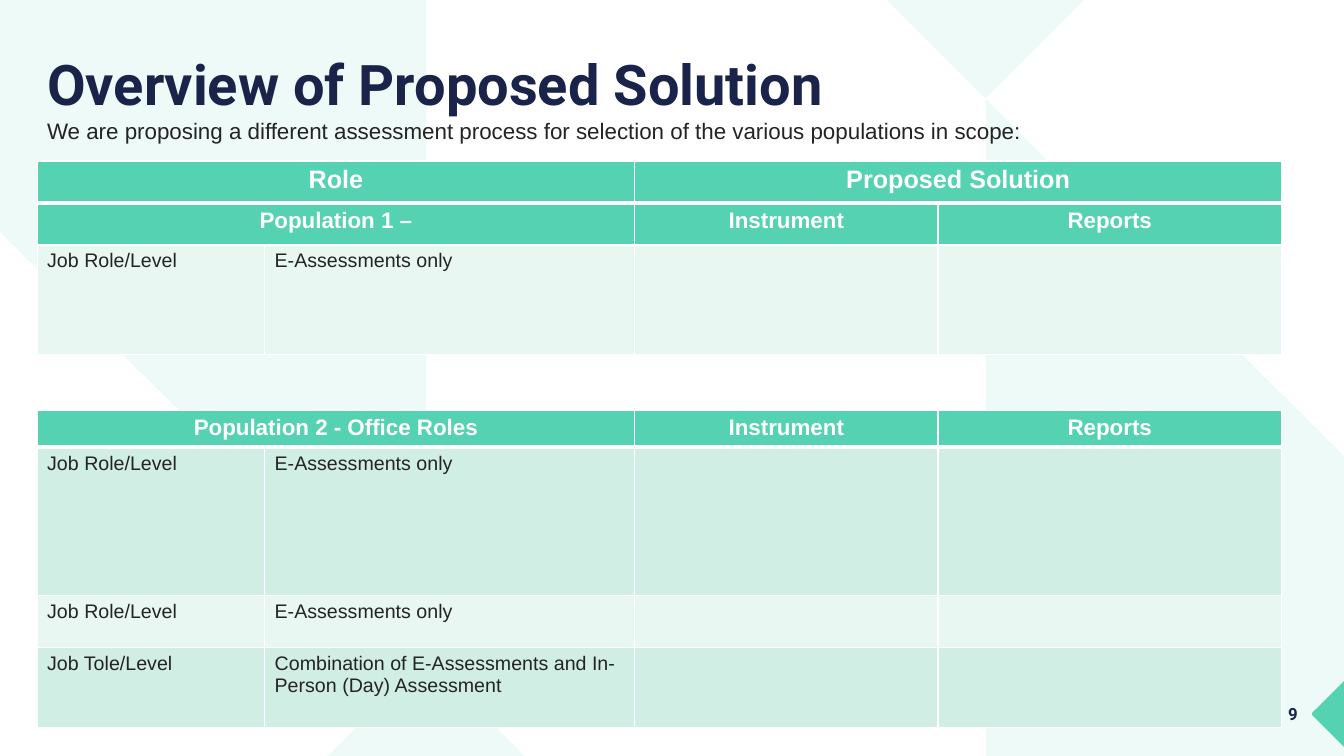
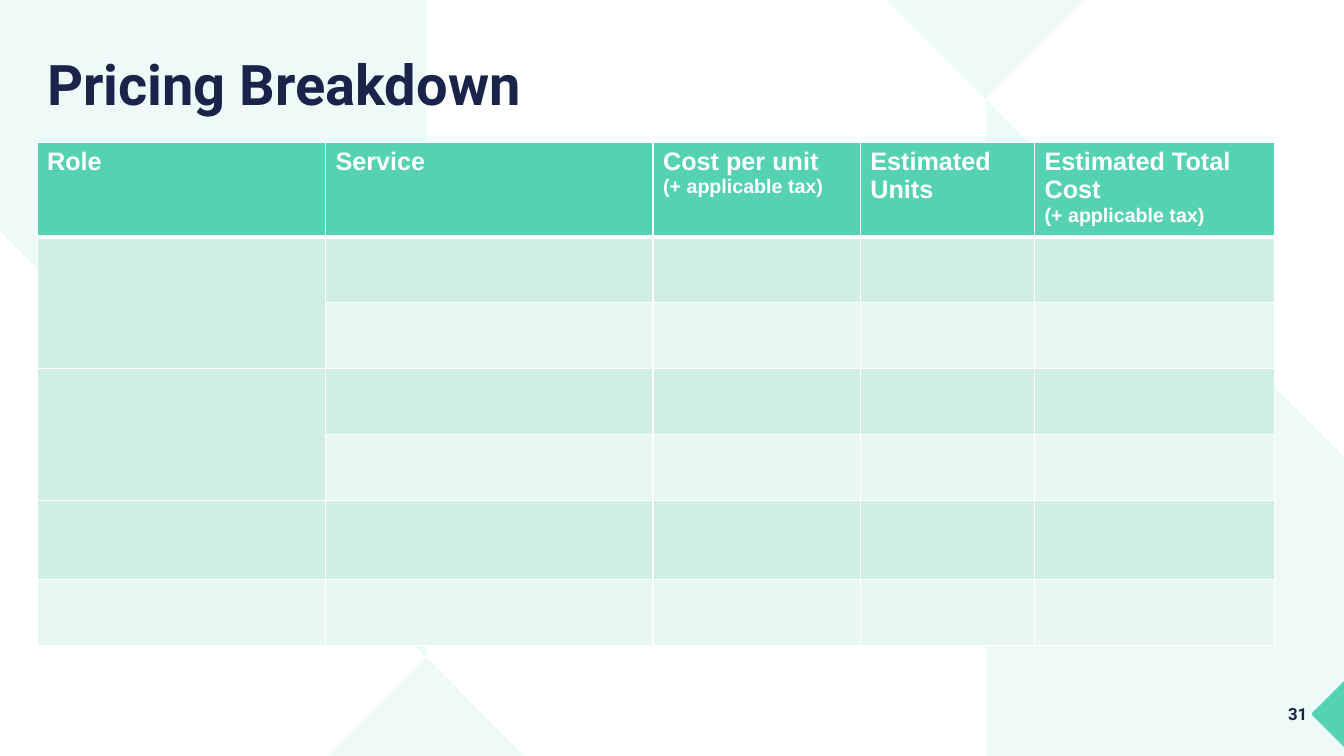
import dataclasses

import lxml.etree
import pptx
import pptx.dml.color
import pptx.enum.text
import pptx.oxml.ns
import pptx.util

Pt = pptx.util.Pt
RGB = pptx.dml.color.RGBColor.from_string
qn = pptx.oxml.ns.qn
ALIGN = pptx.enum.text.PP_ALIGN


@dataclasses.dataclass(frozen=True)
class Theme:
    mint: str = "55D2B1"
    band: str = "D1EEE4"
    pale: str = "E9F7F2"
    navy: str = "1A244A"
    ink: str = "242424"
    white: str = "FFFFFF"
    heading: str = "Roboto"
    body: str = "Arial"
    title: int = 40
    head: int = 18
    subhead: int = 16
    text: int = 14
    number: int = 12


theme = Theme()
LEFT = 26.5


def style(p, size, color, font, bold=False, align=ALIGN.LEFT):
    p.alignment = align
    for r in p.runs:
        r.font.size = Pt(size)
        r.font.name = font
        r.font.bold = bold
        r.font.color.rgb = RGB(color)


def add_grid(s, top, cols, rows, texts, head_sizes, merges, head_align):
    frame = s.shapes.add_table(len(rows), len(cols), Pt(LEFT), Pt(top), Pt(sum(cols)), Pt(sum(rows)))
    table = frame.table
    for column, width in zip(table.columns, cols):
        column.width = Pt(width)
    for row, height in zip(table.rows, rows):
        row.height = Pt(height)
    for y in range(len(rows)):
        is_head = y < len(head_sizes)
        for x in range(len(cols)):
            cell = table.cell(y, x)
            tcPr = cell._tc.get_or_add_tcPr()
            for side in "LRTB":
                if side == "T" and y > 0:
                    continue
                width = 3 if side == "B" and y == 0 else 1
                ln = lxml.etree.SubElement(tcPr, qn("a:ln" + side), w=str(Pt(width)))
                fill = lxml.etree.SubElement(ln, qn("a:solidFill"))
                lxml.etree.SubElement(fill, qn("a:srgbClr"), val=theme.white)
            cell.fill.solid()
            cell.fill.fore_color.rgb = RGB(theme.mint if is_head else theme.band if y % 2 else theme.pale)
            cell.text_frame.text = texts.get((y, x), "")
            for i, p in enumerate(cell.text_frame.paragraphs):
                if is_head:
                    size = theme.text if i else head_sizes[y]
                    style(p, size, theme.white, theme.body, True, head_align)
                else:
                    style(p, theme.text, theme.ink, theme.body)
    for first, last in merges:
        table.cell(*first).merge(table.cell(*last))


prs = pptx.Presentation()
prs.slide_width, prs.slide_height = Pt(960), Pt(540)
layout = prs.slide_layouts[5]

slides = []
for title, number in [("Overview of Proposed Solution", "9"), ("Pricing Breakdown", "31")]:
    s = prs.slides.add_slide(layout)
    slides.append(s)
    sp = s.shapes.title
    sp.left, sp.top, sp.width, sp.height = Pt(LEFT), Pt(34), Pt(828), Pt(57)
    tf = sp.text_frame
    tf.text = title
    tf.auto_size = pptx.enum.text.MSO_AUTO_SIZE.NONE
    tf.vertical_anchor = pptx.enum.text.MSO_ANCHOR.MIDDLE
    tf.paragraphs[0].line_spacing = 0.9
    style(tf.paragraphs[0], theme.title, theme.navy, theme.heading, True)

    tf = s.shapes.add_textbox(Pt(913), Pt(499), Pt(29), Pt(36)).text_frame
    tf.word_wrap = True
    tf.text = number
    style(tf.paragraphs[0], theme.number, theme.navy, theme.heading, True)

overview, pricing = slides

backdrop = [
    ([(0, 0), (304.5, 0), (304.5, 469.5), (0, 165.5)], 10),
    ([(633.5, 0), (774, 0), (704, 70.5)], 10),
    ([(704, 70.5), (960, 326), (960, 540), (704, 540)], 10),
    ([(304.5, 469.5), (374.5, 540), (234, 540)], 10),
    ([(960, 533.5), (937.5, 511), (937, 510), (937.5, 509), (960, 486.5)], 100),
]
for points, opacity in backdrop:
    corners = [(Pt(x), Pt(y)) for x, y in points]
    builder = overview.shapes.build_freeform(*corners[0])
    builder.add_line_segments(corners[1:], close=True)
    sp = builder.convert_to_shape()
    sp.shadow.inherit = False
    sp.line.fill.background()
    sp.fill.solid()
    sp.fill.fore_color.rgb = RGB(theme.mint)
    if opacity < 100:
        color = next(sp.element.iter(qn("a:srgbClr")))
        lxml.etree.SubElement(color, qn("a:alpha"), val=str(opacity * 1000))
    layout.shapes.element.append(sp.element)

tf = overview.shapes.add_textbox(Pt(LEFT), Pt(80), Pt(713.5), Pt(26.5)).text_frame
tf.word_wrap = True
tf.text = "We are proposing a different assessment process for selection of the various populations in scope:"
style(tf.paragraphs[0], theme.subhead, theme.ink, theme.body)

population_cols = [162.5, 264.5, 216.5, 245.5]
add_grid(
    overview, 115, population_cols, [30, 30, 78],
    {
        (0, 0): "Role", (0, 2): "Proposed Solution",
        (1, 0): "Population 1 –", (1, 2): "Instrument", (1, 3): "Reports",
        (2, 0): "Job Role/Level", (2, 1): "E-Assessments only",
    },
    [theme.head, theme.subhead],
    [((0, 0), (0, 1)), ((0, 2), (0, 3)), ((1, 0), (1, 1))],
    ALIGN.CENTER,
)
add_grid(
    overview, 293, population_cols, [26.5, 106, 37, 57.5],
    {
        (0, 0): "Population 2 - Office Roles", (0, 2): "Instrument", (0, 3): "Reports",
        (1, 0): "Job Role/Level", (1, 1): "E-Assessments only",
        (2, 0): "Job Role/Level", (2, 1): "E-Assessments only",
        (3, 0): "Job Tole/Level", (3, 1): "Combination of E-Assessments and In-Person (Day) Assessment",
    },
    [theme.subhead],
    [((0, 0), (0, 1))],
    ALIGN.CENTER,
)

add_grid(
    pricing, 102, [206, 234, 148, 124.5, 171.5], [63.5, 47, 47, 47, 47, 57, 47],
    {
        (0, 0): "Role",
        (0, 1): "Service",
        (0, 2): "Cost per unit\n(+ applicable tax)",
        (0, 3): "Estimated Units",
        (0, 4): "Estimated Total Cost\n(+ applicable tax)",
    },
    [theme.head],
    [((1, 0), (2, 0)), ((3, 0), (4, 0))],
    ALIGN.LEFT,
)

prs.save("out.pptx")
